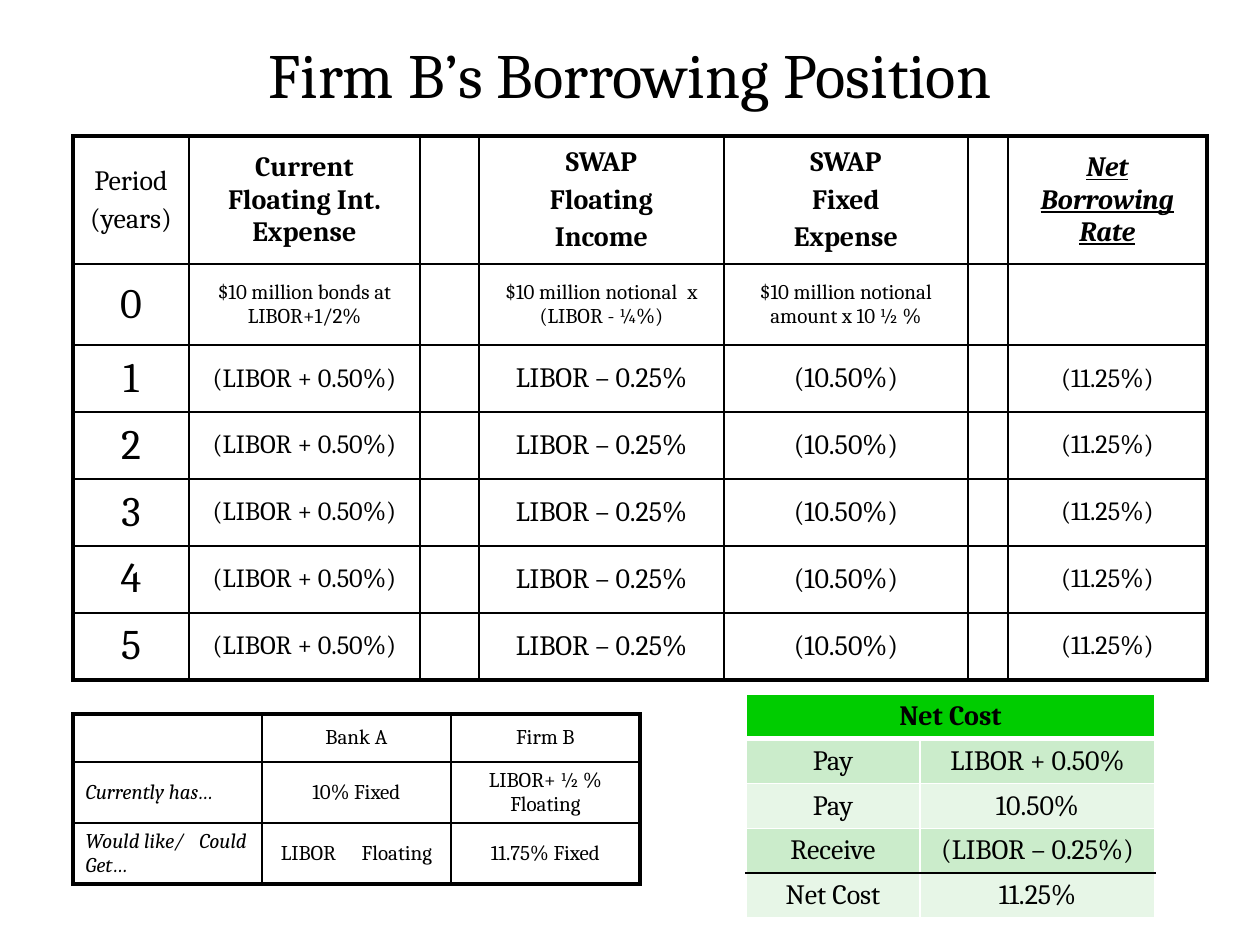
from dataclasses import dataclass, field
from lxml import etree
from pptx import Presentation
from pptx.dml.color import RGBColor
from pptx.enum.text import MSO_ANCHOR, PP_ALIGN
from pptx.oxml.ns import qn
from pptx.util import Emu, Pt

MIDDLE = MSO_ANCHOR.MIDDLE
CENTER, LEFT = PP_ALIGN.CENTER, PP_ALIGN.LEFT
PX = 914400 // 126


@dataclass(frozen=True)
class Style:
    size: int
    bold: bool = False
    italic: bool = False
    underline: bool = False
    align: int = CENTER
    before: float = 0.2


@dataclass(frozen=True)
class Theme:
    font: str = "Cambria"
    ink: str = "000000"
    white: str = "FFFFFF"
    green: str = "00CC00"
    band: str = "CBECCB"
    pale: str = "E7F6E7"
    styles: dict = field(default_factory=lambda: {
        "title": Style(36, before=0),
        "label": Style(16),
        "head": Style(16, bold=True),
        "result": Style(16, bold=True, italic=True, underline=True),
        "period": Style(24),
        "note": Style(12),
        "rate": Style(15),
        "case": Style(12, italic=True, align=LEFT),
        "cost": Style(16, before=0),
        "cost head": Style(16, bold=True, before=0),
    })


THEME = Theme()
THICK, THIN = (THEME.ink, 2.25), (THEME.ink, 1)
WHITE, WHITE_THICK = (THEME.white, 1), (THEME.white, 3)

TITLE = "Firm B’s Borrowing Position"
EMPTY = ("", "note")

# A tuple inside a paragraph is (before, gap in points, after).
POSITION = [
    [(["Period", "(years)"], "label"),
     (["Current Floating Int. Expense"], "head"),
     EMPTY,
     (["SWAP", "Floating", "Income"], "head"),
     (["SWAP", "Fixed", "Expense"], "head"),
     EMPTY,
     (["Net Borrowing Rate"], "result")],
    [(["0"], "period"),
     (["$10 million bonds at LIBOR+1/2%"], "note"),
     EMPTY,
     ([("$10 million notional", 3, "x (LIBOR - ¼%)")], "note"),
     (["$10 million notional amount x 10 ½ %"], "note"),
     EMPTY,
     EMPTY],
] + [
    [([str(year)], "period"),
     (["(LIBOR + 0.50%)"], "rate"),
     EMPTY,
     (["LIBOR – 0.25%"], "label"),
     (["(10.50%)"], "label"),
     EMPTY,
     (["(11.25%)"], "rate")]
    for year in range(1, 6)
]

CHOICES = [
    [EMPTY, (["Bank A"], "note"), (["Firm B"], "note")],
    [(["Currently has…"], "case"), (["10% Fixed"], "note"),
     (["LIBOR+ ½ % Floating"], "note")],
    [([("Would like/", 6, "Could Get…")], "case"),
     ([("LIBOR", 12, "Floating")], "note"), (["11.75% Fixed"], "note")],
]

NET_COST = [[(["Net Cost"], "cost head"), EMPTY]] + [
    [([name], "cost"), ([value], "cost")]
    for name, value in [("Pay", "LIBOR + 0.50%"), ("Pay", "10.50%"),
                        ("Receive", "(LIBOR – 0.25%)"), ("Net Cost", "11.25%")]
]


def framed(count):
    return [THICK] + [THIN] * (count - 1) + [THICK]


TABLES = [
    dict(content=POSITION, at=(73, 136), columns=[116, 231, 59, 245, 244, 40, 199],
         rows=[128, 81] + [67] * 5, across=framed(7), down=framed(7)),
    dict(content=CHOICES, at=(73, 714), columns=[189] * 3, rows=[48, 61, 61],
         across=framed(3), down=framed(3)),
    dict(content=NET_COST, at=(746, 694), columns=[174, 235], rows=[44] * 5,
         across=[WHITE, WHITE_THICK, WHITE, WHITE, THIN, WHITE], down=[WHITE] * 3,
         fills=[THEME.green] + [THEME.band, THEME.pale] * 2, merge_head=True),
]


def px(length):
    return Emu(length * PX)


def add_run(paragraph, text, style, gap=0):
    run = paragraph.add_run()
    run.text = text
    font = run.font
    font.name, font.size = THEME.font, Pt(style.size)
    font.bold, font.italic, font.underline = style.bold, style.italic, style.underline
    font.color.rgb = RGBColor.from_string(THEME.ink)
    if gap:
        run._r.get_or_add_rPr().set("spc", str(gap * 100))


def write(frame, paragraphs, style):
    for index, words in enumerate(paragraphs):
        paragraph = frame.add_paragraph() if index else frame.paragraphs[0]
        paragraph.alignment = style.align
        paragraph.space_before = Pt(style.size * style.before)
        if isinstance(words, tuple):
            before, gap, after = words
            add_run(paragraph, before, style)
            add_run(paragraph, " ", style, gap)
            add_run(paragraph, after, style)
        else:
            add_run(paragraph, words, style)
    if not paragraphs:
        etree.SubElement(frame.paragraphs[0]._p, qn("a:endParaRPr"),
                         sz=str(style.size * 100))


def draw_borders(cell, left, right, top, bottom):
    properties = cell._tc.get_or_add_tcPr()
    for side, (color, width) in zip("LRTB", (left, right, top, bottom)):
        line = etree.SubElement(properties, qn(f"a:ln{side}"), w=str(Pt(width)))
        solid = etree.SubElement(line, qn("a:solidFill"))
        etree.SubElement(solid, qn("a:srgbClr"), val=color)


def add_grid(slide, content, at, columns, rows, across, down, fills=None, merge_head=False):
    frame = slide.shapes.add_table(len(rows), len(columns), *map(px, at),
                                   px(sum(columns)), px(sum(rows)))
    grid = frame.table
    grid.first_row = grid.horz_banding = False
    for column, width in zip(grid.columns, columns):
        column.width = px(width)
    for row, height in zip(grid.rows, rows):
        row.height = px(height)
    for r, entries in enumerate(content):
        for c, (paragraphs, style) in enumerate(entries):
            cell = grid.cell(r, c)
            cell.vertical_anchor = MIDDLE
            write(cell.text_frame, paragraphs, THEME.styles[style])
            draw_borders(cell, down[c], down[c + 1], across[r], across[r + 1])
            if fills:
                cell.fill.solid()
                cell.fill.fore_color.rgb = RGBColor.from_string(fills[r])
            else:
                cell.fill.background()
    if merge_head:
        grid.cell(0, 0).merge(grid.cell(0, len(columns) - 1))


def main():
    deck = Presentation()
    deck.slide_width, deck.slide_height = px(1260), px(945)
    slide = deck.slides.add_slide(deck.slide_layouts[5])
    title = slide.shapes.title
    title.left, title.top, title.width, title.height = map(px, (94, 10, 1072, 126))
    title.text_frame.vertical_anchor = MIDDLE
    write(title.text_frame, [TITLE], THEME.styles["title"])
    for table in TABLES:
        add_grid(slide, **table)
    deck.save("out.pptx")


if __name__ == "__main__":
    main()
